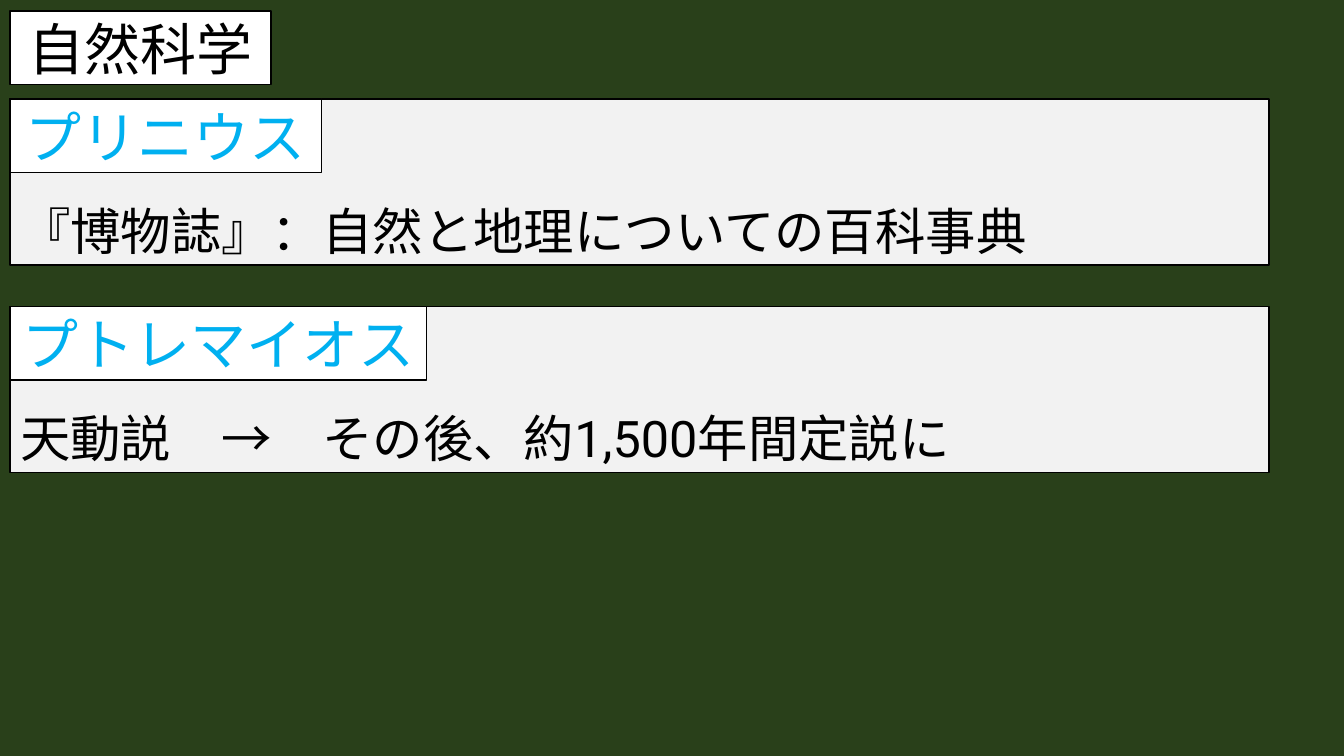
from pptx import Presentation, util as u
from pptx.dml.color import RGBColor
from pptx.enum import shapes, text
from pptx.oxml import ns
from lxml import etree

LEFT = 7.2
LABEL_HEIGHT = 52.6
PANEL_WIDTH, PANEL_HEIGHT = 899.3, 118.8
FIRST_PANEL_TOP, PANEL_PITCH = 70.6, 148.3

TOPICS = [
    ("プリニウス", 222.5, "『博物誌』：自然と地理についての百科事典"),
    ("プトレマイオス", 297.4, "天動説　→　その後、約1,500年間定説に"),
]


def color(hex_value):
    return RGBColor.from_string(hex_value)


class SlideBuilder:
    font = "Roboto"
    black = "000000"
    white = "FFFFFF"
    panel_fill = "F2F2F2"
    accent = "00B0F0"
    background = "29401A"

    def __init__(self, presentation):
        self.slide = presentation.slides.add_slide(presentation.slide_layouts[6])
        fill = self.slide.background.fill
        fill.solid()
        fill.fore_color.rgb = color(self.background)

    def box(self, top, width, height, fill, words, size, font_color, align, anchor):
        shape = self.slide.shapes.add_shape(
            shapes.MSO_SHAPE.RECTANGLE,
            u.Pt(LEFT), u.Pt(top), u.Pt(width), u.Pt(height))
        shape.shadow.inherit = False
        shape.fill.solid()
        shape.fill.fore_color.rgb = color(fill)
        shape.line.color.rgb = color(self.black)
        shape.line.width = u.Pt(1)

        frame = shape.text_frame
        frame.word_wrap = True
        frame.vertical_anchor = anchor
        paragraph = frame.paragraphs[0]
        paragraph.alignment = align
        run = paragraph.add_run()
        run.text = words
        run.font.size = u.Pt(size)
        run.font.name = self.font
        run.font.color.rgb = color(font_color)
        east_asian = etree.SubElement(run.font._element, ns.qn("a:ea"))
        east_asian.set("typeface", self.font)

    def label(self, top, width, words, font_color):
        self.box(top, width, LABEL_HEIGHT, self.white, words, 40, font_color,
                 text.PP_ALIGN.CENTER, text.MSO_ANCHOR.MIDDLE)

    def panel(self, top, words):
        self.box(top, PANEL_WIDTH, PANEL_HEIGHT, self.panel_fill, words, 36,
                 self.black, text.PP_ALIGN.LEFT, text.MSO_ANCHOR.BOTTOM)


def main():
    presentation = Presentation()
    presentation.slide_width = u.Pt(960)
    presentation.slide_height = u.Pt(540)

    builder = SlideBuilder(presentation)
    builder.label(7.9, 186.5, "自然科学", builder.black)
    for index, (name, name_width, description) in enumerate(TOPICS):
        top = FIRST_PANEL_TOP + index * PANEL_PITCH
        builder.panel(top, description)
        builder.label(top, name_width, name, builder.accent)

    presentation.save("out.pptx")


if __name__ == "__main__":
    main()
